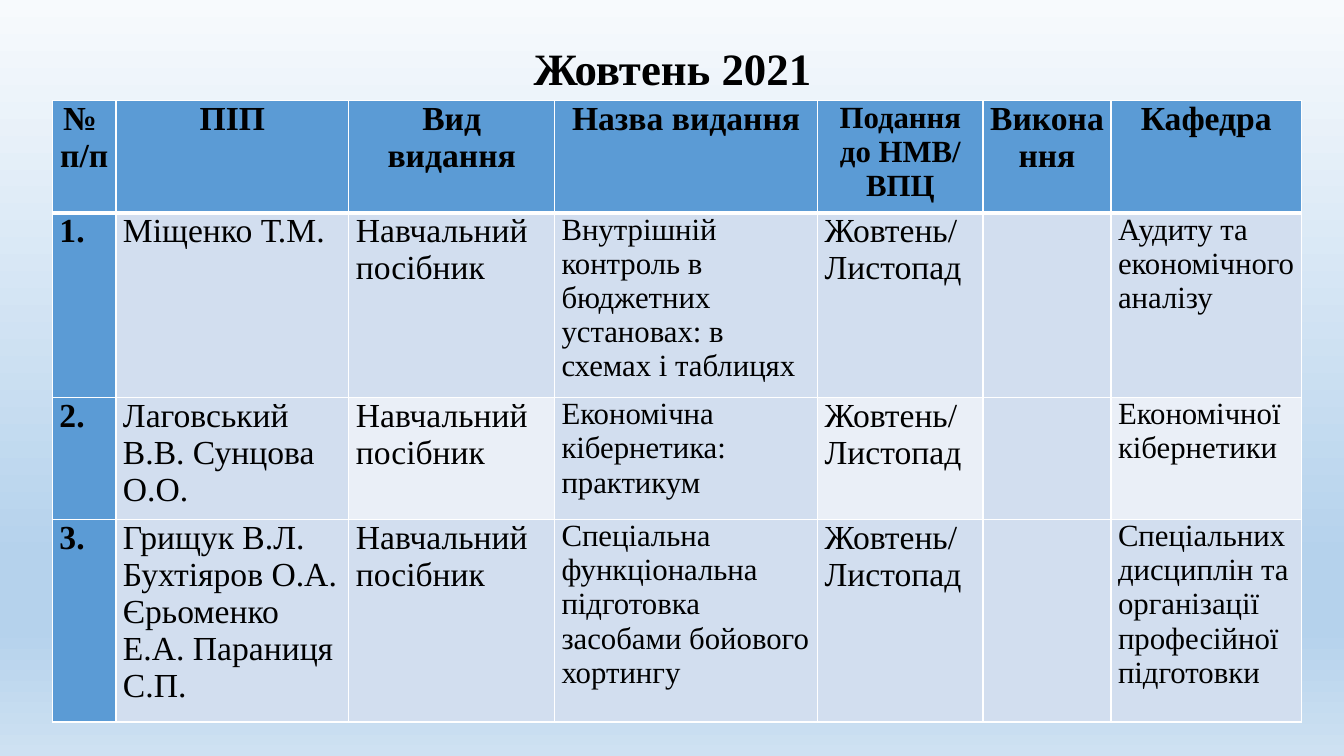
from lxml.etree import SubElement
from pptx import Presentation
from pptx.dml.color import RGBColor
from pptx.enum.text import MSO_ANCHOR, PP_ALIGN
from pptx.oxml.ns import qn
from pptx.util import Inches, Pt

# Content
TITLE = "Жовтень 2021"
HEAD = ["№ \nп/п", "ПІП", "Вид видання", "Назва видання",
        "Подання до НМВ/\nВПЦ", "Виконання", "Кафедра"]
KIND = "Навчальний посібник"
DUE = "Жовтень/\nЛистопад"
BOOKS = [
    ("Міщенко Т.М.",
     "Внутрішній контроль в бюджетних установах: в схемах і таблицях",
     "Аудиту та економічного аналізу"),
    ("Лаговський В.В. Сунцова О.О.",
     "Економічна кібернетика: практикум",
     "Економічної кібернетики"),
    ("Грищук В.Л. Бухтіяров О.А. Єрьоменко Е.А. Параниця С.П.",
     "Спеціальна функціональна підготовка засобами бойового хортингу",
     "Спеціальних дисциплін та організації професійної підготовки"),
]
ROWS = [HEAD] + [
    [f"{num}.", name, KIND, book, DUE, "", dept]
    for num, (name, book, dept) in enumerate(BOOKS, 1)
]

# Style
FONT = "Times New Roman"
BLACK = RGBColor(0x00, 0x00, 0x00)
WHITE = RGBColor(0xFF, 0xFF, 0xFF)
BLUE = RGBColor(0x5B, 0x9B, 0xD5)
PALE = RGBColor(0xD2, 0xDE, 0xEF)
LIGHT = RGBColor(0xEA, 0xEF, 0xF7)
SKY = [(0, RGBColor(0xF7, 0xFA, 0xFD)), (74, RGBColor(0xB5, 0xD2, 0xEC)),
       (83, RGBColor(0xB5, 0xD2, 0xEC)), (100, RGBColor(0xCE, 0xE1, 0xF2))]
WIDTHS = [0.63, 2.31, 2.04, 2.61, 1.64, 1.27, 1.89]
HEIGHTS = [1.11, 1.76, 1.21, 2.01]
SMALL = {(0, 4)} | {(row, col) for row in (1, 2, 3) for col in (3, 6)}
LIGHTS = {(2, 2), (2, 4), (2, 6)}


def add_text(frame, text, size, bold, align):
    for num, line in enumerate(text.split("\n")):
        para = frame.paragraphs[0] if num == 0 else frame.add_paragraph()
        para.alignment = align
        run = para.add_run()
        run.text = line
        font = run.font
        font.name, font.size, font.bold = FONT, Pt(size), bold
        font.color.rgb = BLACK


def add_color(node, color):
    SubElement(node, qn("a:srgbClr"), val=str(color))


def set_edges(cell, base):
    props = cell._tc.get_or_add_tcPr()
    sides = [("L", 1), ("R", 1), ("T", 1), ("B", base)]
    for at, (side, width) in enumerate(sides):
        line = SubElement(props, qn(f"a:ln{side}"), w=str(Pt(width)))
        add_color(SubElement(line, qn("a:solidFill")), WHITE)
        props.insert(at, line)


deck = Presentation()
deck.slide_width, deck.slide_height = Inches(13.33), Inches(7.5)
slide = deck.slides.add_slide(deck.slide_layouts[6])

# Background
fill = slide.background.fill
fill.gradient()
fill.gradient_angle = 270
stops = slide._element.find(".//" + qn("a:gsLst"))
for stop in list(stops):
    stops.remove(stop)
for place, color in SKY:
    add_color(SubElement(stops, qn("a:gs"), pos=str(place * 1000)), color)

# Title
box = slide.shapes.add_textbox(Inches(0.92), Inches(0.4),
                               Inches(11.5), Inches(0.6))
box.text_frame.word_wrap = True
box.text_frame.vertical_anchor = MSO_ANCHOR.MIDDLE
add_text(box.text_frame, TITLE, 32, True, PP_ALIGN.CENTER)
box.text_frame.paragraphs[0].line_spacing = 0.9

# Table
table = slide.shapes.add_table(
    len(ROWS), len(HEAD), Inches(0.52), Inches(1),
    Inches(sum(WIDTHS)), Inches(sum(HEIGHTS))).table
for col, width in enumerate(WIDTHS):
    table.columns[col].width = Inches(width)
for row, texts in enumerate(ROWS):
    table.rows[row].height = Inches(HEIGHTS[row])
    for col, text in enumerate(texts):
        cell = table.cell(row, col)
        cell.margin_left = cell.margin_right = Inches(0.07)
        cell.margin_top = cell.margin_bottom = 0
        edge = row == 0 or col == 0
        cell.fill.solid()
        cell.fill.fore_color.rgb = (
            BLUE if edge else LIGHT if (row, col) in LIGHTS else PALE)
        set_edges(cell, 1 if row else 3)
        if text:
            add_text(cell.text_frame, text,
                     22 if (row, col) in SMALL else 24, edge,
                     PP_ALIGN.LEFT if row else PP_ALIGN.CENTER)

deck.save("out.pptx")
